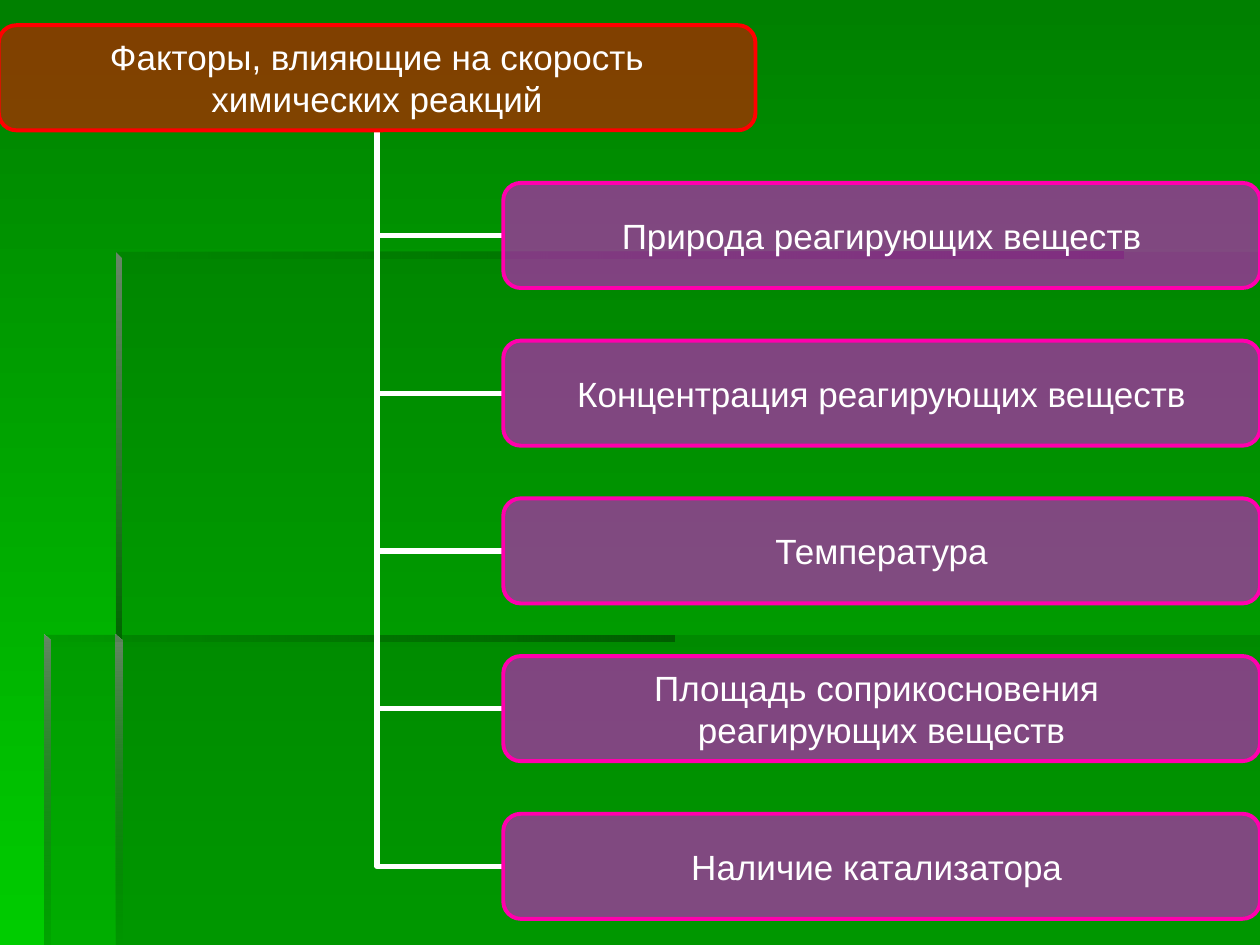
from dataclasses import dataclass

from lxml.etree import SubElement
from pptx import Presentation
from pptx.dml.color import RGBColor as RGB
from pptx.enum.shapes import MSO_CONNECTOR as CONN, MSO_SHAPE as SHAPE
from pptx.enum.text import MSO_ANCHOR as ANCHOR, PP_ALIGN as ALIGN
from pptx.oxml.ns import qn
from pptx.util import Inches, Pt


@dataclass(frozen=True)
class Theme:
    font: str = "Arial"
    size: float = 20
    text: str = "FFFFFF"
    top: str = "008000"
    bottom: str = "00CC00"
    panel: str = "006600"
    edge: str = "005E00"
    highlight: str = "668666"
    root: str = "FF0000"
    factor: str = "FF00FF"
    factor_line: str = "FF00AD"
    box_line: float = 2.25
    link_line: float = 3


T = Theme()
WIDTH, HEIGHT = 10, 7.5
ROOT = ["Факторы, влияющие на скорость", "химических реакций"]
FACTORS = [
    ["Природа реагирующих веществ"],
    ["Концентрация реагирующих веществ"],
    ["Температура"],
    ["Площадь соприкосновения ", "реагирующих веществ"],
    ["Наличие катализатора "],
]


def set_alpha(parent, percent):
    for color in parent.iter(qn("a:srgbClr")):
        SubElement(color, qn("a:alpha")).set("val", str(percent * 1000))


def fill_solid(sp, color, alpha):
    sp.fill.solid()
    sp.fill.fore_color.rgb = RGB.from_string(color)
    set_alpha(sp.fill._xPr.find(qn("a:solidFill")), alpha)


def fill_gradient(fill, colors, angle, alphas=(100, 100)):
    fill.gradient()
    fill.gradient_angle = angle
    for stop, color, alpha in zip(fill.gradient_stops, colors, alphas):
        stop.color.rgb = RGB.from_string(color)
        if alpha < 100:
            set_alpha(stop._gs, alpha)


def add_text(tf, lines, size=T.size, color=T.text, font=T.font, align=ALIGN.CENTER):
    tf.word_wrap = False
    tf.vertical_anchor = ANCHOR.MIDDLE
    tf.margin_left = tf.margin_right = tf.margin_top = tf.margin_bottom = 0
    for i, line in enumerate(lines):
        p = tf.paragraphs[0] if i == 0 else tf.add_paragraph()
        p.alignment = align
        r = p.add_run()
        r.text = line
        r.font.size, r.font.name = Pt(size), font
        r.font.color.rgb = RGB.from_string(color)


def add_outline(slide, points):
    points = [(Inches(x), Inches(y)) for x, y in points]
    builder = slide.shapes.build_freeform(*points[0])
    builder.add_line_segments(points[1:], close=True)
    sp = builder.convert_to_shape()
    sp.shadow.inherit = False
    sp.line.fill.background()
    return sp


def add_top_edge(slide, x, y, length, thick):
    sp = add_outline(slide, [(x, y), (x, y + thick), (x + length, y + thick), (x + length, y)])
    fill_gradient(sp.fill, (T.panel, T.edge), 0, (0, 100))


def add_side_edge(slide, x, y, length, thick, end_alpha):
    sp = add_outline(slide, [(x, y), (x, y + length), (x + thick, y + length), (x + thick, y + thick)])
    fill_gradient(sp.fill, (T.highlight, T.panel), 270, (100, end_alpha))


def add_backdrop(slide, width, height):
    fill_gradient(slide.background.fill, (T.top, T.bottom), 270)
    outer, inner, upper, lower, thick = 0.35, 0.92, 2, 5.04, 0.05
    panels = [
        [(inner, lower), (inner, height), (width, height), (width, lower)],
        [(inner, lower), (outer, lower), (outer, height), (width, height),
         (width, upper), (inner, upper)],
    ]
    for points in panels:
        fill_solid(add_outline(slide, points), T.panel, 30)
    add_top_edge(slide, inner, upper, width * 0.8, thick)
    add_side_edge(slide, inner, upper, lower + thick - upper, thick, 100)
    add_side_edge(slide, inner, lower, height - lower, thick, 0)
    add_top_edge(slide, outer, lower, width * 0.5, thick)
    add_side_edge(slide, outer, lower, height - lower, thick, 10)


def add_link(slide, trunk_x, trunk_y, box_x, box_y):
    cx = slide.shapes.add_connector(
        CONN.ELBOW, Inches(trunk_x), Inches(trunk_y), Inches(box_x), Inches(box_y))
    cx.line.color.rgb = RGB.from_string(T.text)
    cx.line.width = Pt(T.link_line)
    props = cx._element.spPr
    props.find(qn("a:prstGeom")).set("prst", "bentConnector2")
    props.find(qn("a:xfrm")).set("rot", "10800000")
    SubElement(props, qn("a:effectLst"))


def add_node(slide, x, y, w, h, lines, fill, line):
    sp = slide.shapes.add_shape(
        SHAPE.ROUNDED_RECTANGLE, Inches(x), Inches(y), Inches(w), Inches(h))
    sp.shadow.inherit = False
    fill_solid(sp, fill, 50)
    sp.line.color.rgb = RGB.from_string(line)
    sp.line.width = Pt(T.box_line)
    add_text(sp.text_frame, lines)


def add_hierarchy(slide, x, y, w, h):
    row = h / (len(FACTORS) + 1)
    box_w, box_h = w * 0.6, row / 1.5
    factor_x, trunk_x = x + w - box_w, x + box_w / 2
    tops = [y + row * (i + 1) for i in range(len(FACTORS))]
    for top in reversed(tops):
        add_link(slide, trunk_x, y + box_h, factor_x, top + box_h / 2)
    add_node(slide, x, y, box_w, box_h, ROOT, T.root, T.root)
    for top, lines in zip(tops, FACTORS):
        add_node(slide, factor_x, top, box_w, box_h, lines, T.factor, T.factor_line)


def main():
    prs = Presentation()
    prs.slide_width, prs.slide_height = Inches(WIDTH), Inches(HEIGHT)
    slide = prs.slides.add_slide(prs.slide_layouts[6])
    add_backdrop(slide, WIDTH, HEIGHT)
    add_hierarchy(slide, -0.01, 0.2, WIDTH + 0.01, HEIGHT + 0.01)
    prs.save("out.pptx")


if __name__ == "__main__":
    main()
